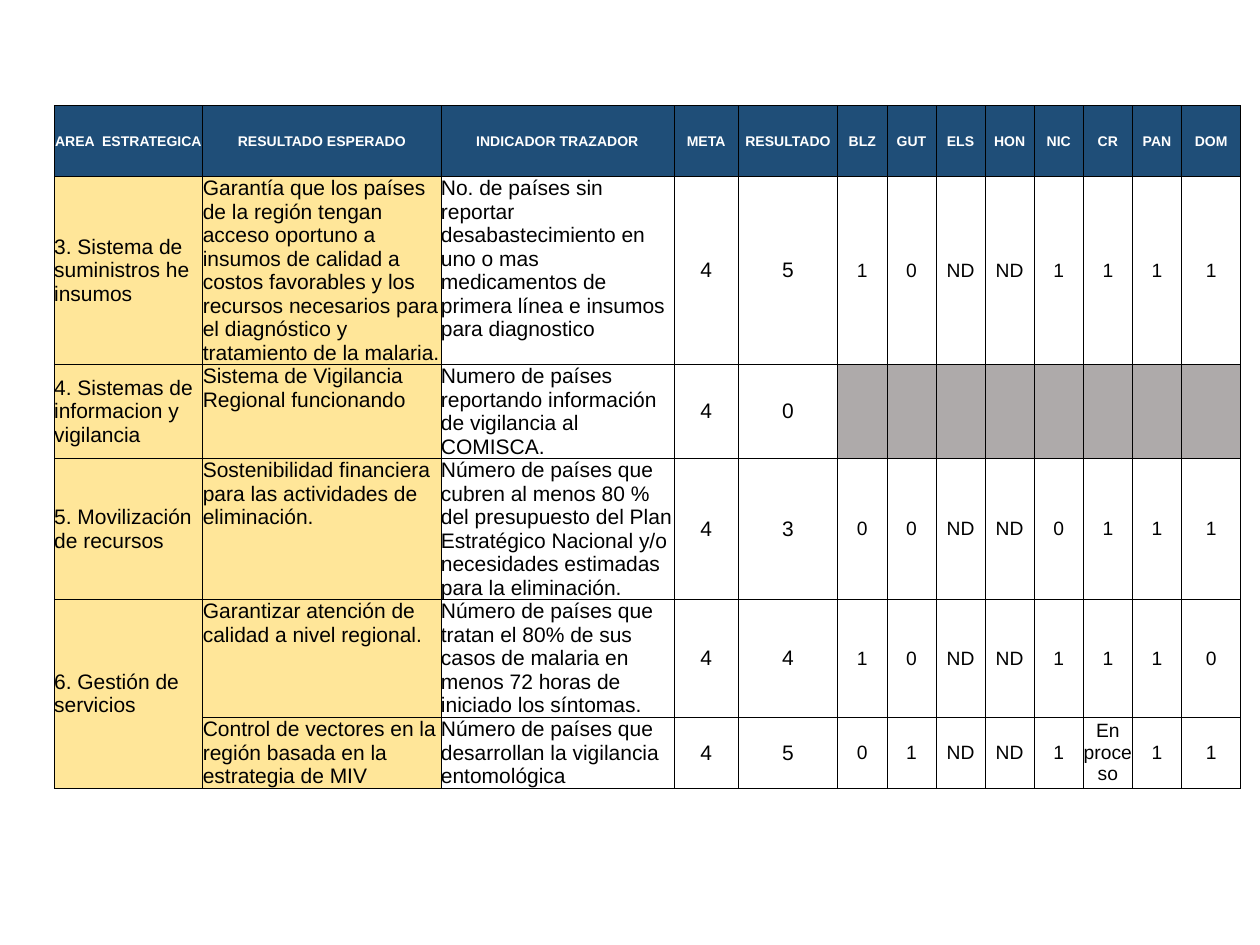
import pptx
import pptx.util
import pptx.dml.color
import pptx.enum.text
import pptx.oxml
import pptx.oxml.ns

Inches = pptx.util.Inches
Pt = pptx.util.Pt
ANCHOR = pptx.enum.text.MSO_ANCHOR
ALIGN = pptx.enum.text.PP_ALIGN


def rgb(value):
    return pptx.dml.color.RGBColor.from_string(value)


def add_borders(cell):
    properties = cell._tc.get_or_add_tcPr()
    for side in ("lnL", "lnR", "lnT", "lnB"):
        properties.append(pptx.oxml.parse_xml(
            f'<a:{side} {pptx.oxml.ns.nsdecls("a")} w="{Pt(0.5)}">'
            f'<a:solidFill><a:srgbClr val="000000"/></a:solidFill></a:{side}>'
        ))


headings = ["AREA  ESTRATEGICA", "RESULTADO ESPERADO", "INDICADOR TRAZADOR", "META", "RESULTADO",
            "BLZ", "GUT", "ELS", "HON", "NIC", "CR", "PAN", "DOM"]
indicators = [
    ["3. Sistema de suministros he insumos",
     "Garantía que los países de la región tengan acceso oportuno a insumos de calidad a costos "
     "favorables y los recursos necesarios para el diagnóstico y tratamiento de la malaria.",
     "No. de países sin reportar desabastecimiento en uno o mas medicamentos de primera línea "
     "e insumos para diagnostico",
     "4", "5", "1", "0", "ND", "ND", "1", "1", "1", "1"],
    ["4. Sistemas de informacion y vigilancia",
     "Sistema de Vigilancia Regional funcionando",
     "Numero de países reportando información de vigilancia al COMISCA.",
     "4", "0"] + [""] * 8,
    ["5. Movilización de recursos",
     "Sostenibilidad financiera para las actividades de eliminación.",
     "Número de países que cubren al menos 80 % del presupuesto del Plan Estratégico Nacional "
     "y/o necesidades estimadas para la eliminación.",
     "4", "3", "0", "0", "ND", "ND", "0", "1", "1", "1"],
    ["6. Gestión de servicios",
     "Garantizar atención de calidad a nivel regional.",
     "Número de países que tratan el 80% de sus casos de malaria en menos 72 horas de iniciado "
     "los síntomas.",
     "4", "4", "1", "0", "ND", "ND", "1", "1", "1", "0"],
    ["",
     "Control de vectores en la región basada en la estrategia de MIV",
     "Número de países que desarrollan la vigilancia entomológica",
     "4", "5", "0", "1", "ND", "ND", "1", "En proceso", "1", "1"],
]
column_widths = [1.18, 1.89, 1.85, 0.51, 0.79] + [0.39] * 7 + [0.47]
row_heights = [0.56, 0.84, 0.51, 0.84, 0.66, 0.42]

header_format = {"size": Pt(8), "bold": True, "color": "FFFFFF"}
body_format = {"size": Pt(12), "bold": False, "color": "000000"}
country_format = {**body_format, "size": Pt(11)}
no_margins = {f"margin_{side}": 0 for side in ("left", "right", "top", "bottom")}

presentation = pptx.Presentation()
presentation.slide_width = Inches(10)
presentation.slide_height = Inches(7.5)
slide = presentation.slides.add_slide(presentation.slide_layouts[6])

matrix_frame = slide.shapes.add_table(
    len(row_heights), len(column_widths), Inches(0.43), Inches(0.84), Inches(9.45), Inches(5.76))
matrix = matrix_frame.table
matrix.first_row = False
matrix.horz_banding = False
for column, width in zip(matrix.columns, column_widths):
    column.width = Inches(width)
for row, height in zip(matrix.rows, row_heights):
    row.height = Inches(height)
matrix_frame.height = Inches(5.76)
matrix.cell(4, 0).merge(matrix.cell(5, 0))

for row_index, texts in enumerate([headings] + indicators):
    for column_index, text in enumerate(texts):
        cell = matrix.cell(row_index, column_index)
        is_header = row_index == 0
        is_description = not is_header and column_index in (1, 2)
        is_country = column_index > 4

        if is_header:
            fill, font_format = "1F4E78", header_format
        elif column_index < 2:
            fill, font_format = "FFE699", body_format
        elif column_index == 2:
            fill, font_format = "FFFFFF", body_format
        else:
            fill = "AEAAAA" if not text else None
            font_format = country_format if is_country else body_format

        add_borders(cell)
        if fill:
            cell.fill.solid()
            cell.fill.fore_color.rgb = rgb(fill)
        else:
            cell.fill.background()

        anchor = ANCHOR.TOP if is_description else ANCHOR.MIDDLE
        for name, value in {**no_margins, "vertical_anchor": anchor}.items():
            setattr(cell, name, value)
        if not text:
            continue

        paragraph = cell.text_frame.paragraphs[0]
        paragraph.alignment = ALIGN.CENTER if is_header or column_index > 2 else ALIGN.LEFT
        run = paragraph.add_run()
        run.text = text
        run.font.name = "Arial"
        for name, value in font_format.items():
            if name == "color":
                run.font.color.rgb = rgb(value)
            else:
                setattr(run.font, name, value)

presentation.save("out.pptx")
